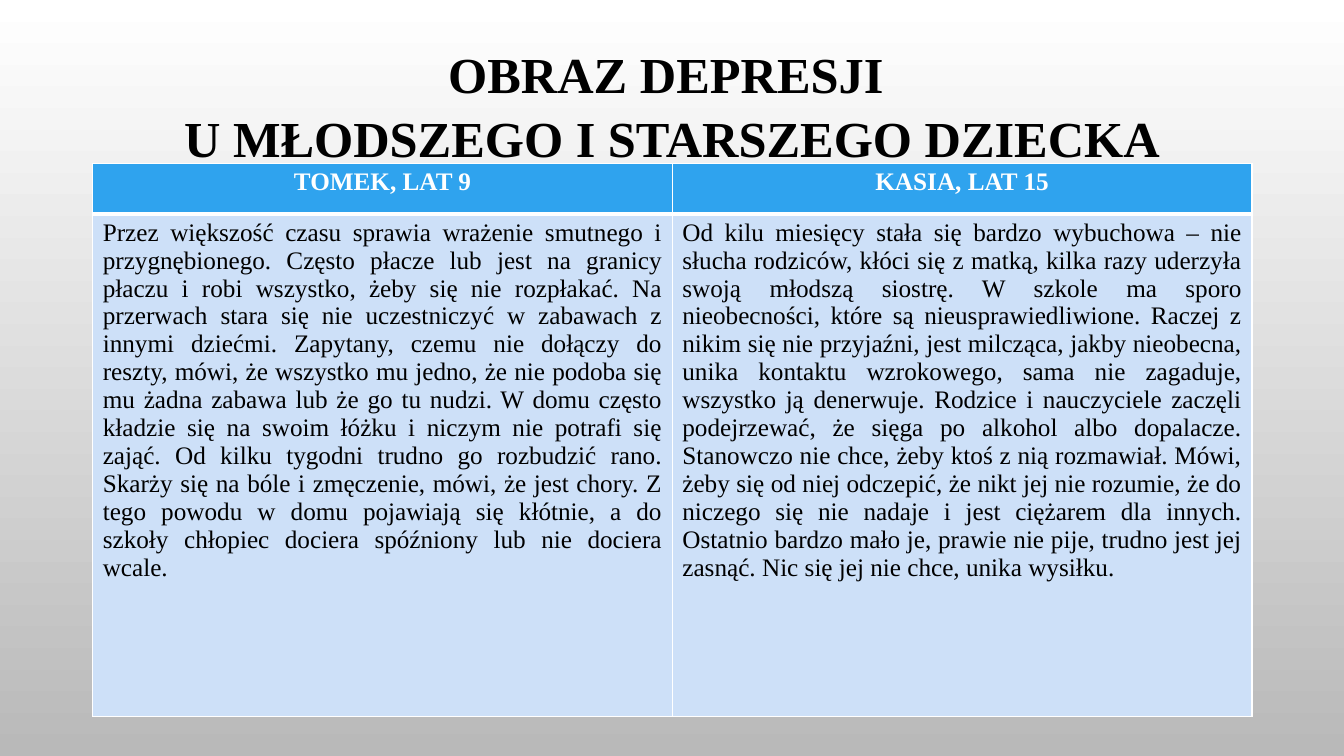
import lxml.etree
import pptx
import pptx.dml.color
import pptx.enum.text
import pptx.oxml.ns
import pptx.util

Pt = pptx.util.Pt
RGBColor = pptx.dml.color.RGBColor
ALIGN = pptx.enum.text.PP_ALIGN
ANCHOR = pptx.enum.text.MSO_ANCHOR
qn = pptx.oxml.ns.qn

WHITE = RGBColor(0xFF, 0xFF, 0xFF)
BLACK = RGBColor(0x00, 0x00, 0x00)
GREY = RGBColor(0xB9, 0xB9, 0xB9)
HEADER_BLUE = RGBColor(0x2F, 0xA3, 0xEE)
PALE_BLUE = RGBColor(0xCD, 0xE0, 0xF8)

CHILDREN = [
    ("TOMEK, LAT 9",
     "Przez większość czasu sprawia wrażenie smutnego i przygnębionego. "
     "Często płacze lub jest na granicy płaczu i robi wszystko, żeby się nie rozpłakać. "
     "Na przerwach stara się nie uczestniczyć w zabawach z innymi dziećmi. "
     "Zapytany, czemu nie dołączy do reszty, mówi, że wszystko mu jedno, "
     "że nie podoba się mu żadna zabawa lub że go tu nudzi. "
     "W domu często kładzie się na swoim łóżku i niczym nie potrafi się zająć. "
     "Od kilku tygodni trudno go rozbudzić rano. "
     "Skarży się na bóle i zmęczenie, mówi, że jest chory. "
     "Z tego powodu w domu pojawiają się kłótnie, a do szkoły chłopiec dociera "
     "spóźniony lub nie dociera wcale."),
    ("KASIA, LAT 15",
     "Od kilu miesięcy stała się bardzo wybuchowa – nie słucha rodziców, "
     "kłóci się z matką, kilka razy uderzyła swoją młodszą siostrę. "
     "W szkole ma sporo nieobecności, które są nieusprawiedliwione. "
     "Raczej z nikim się nie przyjaźni, jest milcząca, jakby nieobecna, "
     "unika kontaktu wzrokowego, sama nie zagaduje, wszystko ją denerwuje. "
     "Rodzice i nauczyciele zaczęli podejrzewać, że sięga po alkohol albo dopalacze. "
     "Stanowczo nie chce, żeby ktoś z nią rozmawiał. "
     "Mówi, żeby się od niej odczepić, że nikt jej nie rozumie, "
     "że do niczego się nie nadaje i jest ciężarem dla innych. "
     "Ostatnio bardzo mało je, prawie nie pije, trudno jest jej zasnąć. "
     "Nic się jej nie chce, unika wysiłku."),
]


def write(frame, text, align, size, color, bold):
    paragraph = frame.paragraphs[0]
    paragraph.text = text
    paragraph.alignment = align
    font_format = {"name": "Times New Roman", "size": Pt(size), "bold": bold}
    for attribute, value in font_format.items():
        setattr(paragraph.font, attribute, value)
    paragraph.font.color.rgb = color


def add_borders(cell, widths):
    """Draw white cell borders; widths maps the sides L, R, T, B to points."""
    properties = cell._tc.get_or_add_tcPr()
    for position, (side, width) in enumerate(widths.items()):
        border = lxml.etree.Element(qn(f"a:ln{side}"), w=str(Pt(width)))
        fill = lxml.etree.SubElement(border, qn("a:solidFill"))
        lxml.etree.SubElement(fill, qn("a:srgbClr"), val=str(WHITE))
        properties.insert(position, border)


deck = pptx.Presentation()
deck.slide_width, deck.slide_height = Pt(960), Pt(540)
slide = deck.slides.add_slide(deck.slide_layouts[6])

backdrop = slide.background.fill
backdrop.gradient()
backdrop.gradient_angle = 270
for stop, color in zip(backdrop.gradient_stops, (WHITE, GREY)):
    stop.color.rgb = color

title = slide.shapes.add_textbox(Pt(18.7), Pt(13), Pt(923), Pt(161)).text_frame
title_format = {"word_wrap": True, "vertical_anchor": ANCHOR.MIDDLE, "margin_bottom": Pt(43)}
for attribute, value in title_format.items():
    setattr(title, attribute, value)
write(title, "OBRAZ DEPRESJI \vU MŁODSZEGO I STARSZEGO DZIECKA", ALIGN.CENTER, 36, BLACK, True)
title.paragraphs[0].line_spacing = 1.07

comparison = slide.shapes.add_table(
    2, len(CHILDREN), Pt(66.24), Pt(116.64), Pt(828), Pt(395)).table
for row, height in zip(comparison.rows, (36, 359)):
    row.height = Pt(height)

row_styles = [
    (HEADER_BLUE, ALIGN.CENTER, WHITE, True, {"L": 1, "R": 1, "T": 1, "B": 3}),
    (PALE_BLUE, ALIGN.JUSTIFY, BLACK, False, {"L": 1, "R": 1, "T": 3, "B": 1}),
]
for column, child in enumerate(CHILDREN):
    for row, (text, style) in enumerate(zip(child, row_styles)):
        background, align, color, bold, widths = style
        cell = comparison.cell(row, column)
        cell.fill.solid()
        cell.fill.fore_color.rgb = background
        add_borders(cell, widths)
        write(cell.text_frame, text, align, 18, color, bold)

deck.save("out.pptx")
